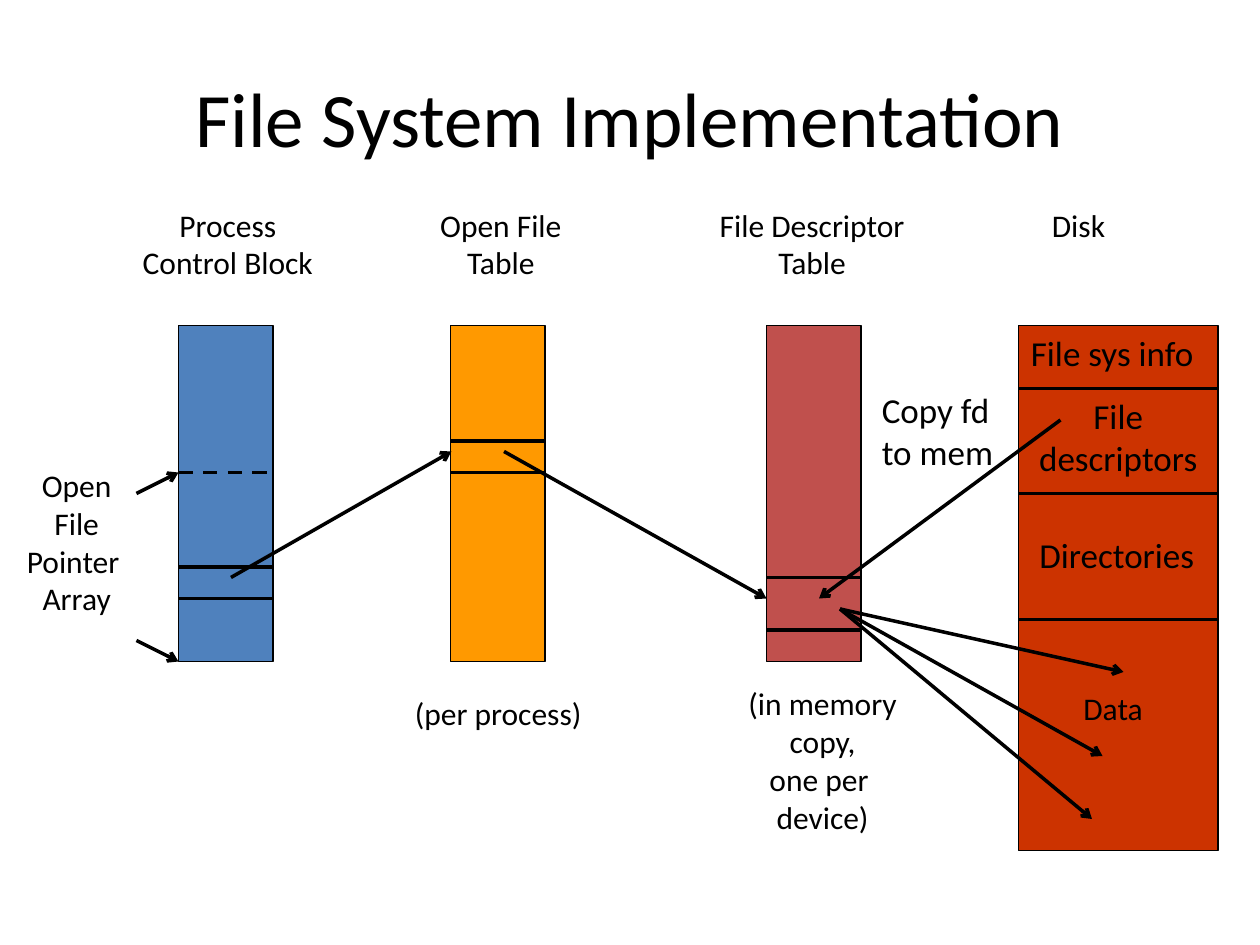
from typing import NamedTuple

from lxml import etree
from pptx import Presentation
from pptx import util as u
from pptx.dml.color import RGBColor
from pptx.enum import dml, shapes, text
from pptx.oxml import ns

COLS, ROWS = 120, 90
INK = {"black": "000000", "blue": "4F81BD", "amber": "FF9900",
       "rose": "C0504D", "rust": "CC3300"}
FONT = "Calibri"

deck = Presentation()
deck.slide_width, deck.slide_height = u.Inches(10), u.Inches(7.5)
CELL_W, CELL_H = deck.slide_width / COLS, deck.slide_height / ROWS
slide = deck.slides.add_slide(deck.slide_layouts[5])


class Bar(NamedTuple):
    col: float
    wide: float
    tall: float
    ink: str
    rules: tuple[float, ...]


class Label(NamedTuple):
    words: str
    col: float
    row: float
    wide: float
    tall: float
    size: float = 18
    mid: bool = True
    wrap: bool = False


class Arrow(NamedTuple):
    start: tuple[float, float]
    end: tuple[float, float]


TOP, HEAD = 31, 19
BARS = [
    Bar(17, 9, 32, "blue", (54, 57)),
    Bar(42.9, 9, 32, "amber", (42, 45)),
    Bar(73, 9, 32, "rose", (55, 60)),
    Bar(97, 19, 50, "rust", (37, 47, 59)),
]
LABELS = [
    Label("Process\nControl Block", 9.1, HEAD, 25.2, 10.8),
    Label("Open File\nTable", 38.5, HEAD, 18.4, 10.8),
    Label("File Descriptor\nTable", 64.1, HEAD, 26.5, 10.8),
    Label("Disk", 99, HEAD, 10, 6, mid=False),
    Label("Open\nFile\nPointer \nArray", -0.2, 43.8, 15, 20.4),
    Label("(per process)", 38.2, 65.5, 18.5, 4.8),
    Label("(in memory\ncopy,\none per \ndevice)", 67.8, 64.6, 21.1, 20.4),
    Label("Copy fd\nto mem", 82.8, 36.4, 13.2, 9.2, 20, False),
    Label("File sys info", 97, TOP, 19, 5.2, 20, False, True),
    Label("File\ndescriptors", 97, 37, 19, 9.2, 20, True, True),
    Label("Directories", 97.8, 50.2, 17.3, 5.2, 20, False),
    Label("Data", 102, 65, 10, 6, mid=False),
]
FILE = (80, 58)
ARROWS = [
    Arrow((13, 47), (17, 45)),
    Arrow((13, 61), (17, 63)),
    Arrow((22, 55), (43, 43)),
    Arrow((48, 43), (73, 57)),
    Arrow((101, 40), (78, 57)),
    *(Arrow(FILE, goal) for goal in [(107, 64), (105, 72), (104, 78)]),
]


def across(cols: float) -> int:
    return round(cols * CELL_W)


def down(rows: float) -> int:
    return round(rows * CELL_H)


def color(name: str) -> RGBColor:
    return RGBColor.from_string(INK[name])


def write(frame, words: str, *, size: float = 18, mid: bool = True,
          ink: str = "black") -> None:
    """Fill a text frame, one paragraph for each line of words."""
    for i, line in enumerate(words.split("\n")):
        para = frame.add_paragraph() if i else frame.paragraphs[0]
        para.alignment = text.PP_ALIGN.CENTER if mid else text.PP_ALIGN.LEFT
        run = para.add_run()
        run.text = line
        run.font.name, run.font.size = FONT, u.Pt(size)
        run.font.color.rgb = color(ink)


def draw_line(start: tuple[float, float], end: tuple[float, float], *,
              dash: bool = False, tip: bool = False) -> None:
    line = slide.shapes.add_connector(
        shapes.MSO_CONNECTOR.STRAIGHT, across(start[0]), down(start[1]),
        across(end[0]), down(end[1]))
    line.line.color.rgb, line.line.width = color("black"), u.Pt(2)
    if dash:
        line.line.dash_style = dml.MSO_LINE.DASH
    if tip:
        etree.SubElement(line.line._get_or_add_ln(), ns.qn("a:tailEnd"),
                         type="arrow")
    etree.SubElement(line._element.spPr, ns.qn("a:effectLst"))


def draw_bar(bar: Bar) -> None:
    box = slide.shapes.add_shape(
        shapes.MSO_SHAPE.RECTANGLE, across(bar.col), down(TOP),
        across(bar.wide), down(bar.tall))
    box.shadow.inherit = False
    box.fill.solid()
    box.fill.fore_color.rgb = color(bar.ink)
    box.line.color.rgb, box.line.width = color("black"), u.Pt(1)
    for row in bar.rules:
        draw_line((bar.col, row), (bar.col + bar.wide, row))


def draw_label(label: Label) -> None:
    frame = slide.shapes.add_textbox(
        across(label.col), down(label.row),
        across(label.wide), down(label.tall)).text_frame
    frame.word_wrap = label.wrap
    frame.auto_size = text.MSO_AUTO_SIZE.SHAPE_TO_FIT_TEXT
    write(frame, label.words, size=label.size, mid=label.mid)


def main() -> None:
    title = slide.shapes.title
    title.left, title.top = across(6), down(3.6)
    title.width, title.height = across(108), down(15)
    title.text_frame.vertical_anchor = text.MSO_ANCHOR.MIDDLE
    write(title.text_frame, "File System Implementation", size=44)

    for bar in BARS:
        draw_bar(bar)
    block = BARS[0]
    draw_line((block.col, 45), (block.col + block.wide, 45), dash=True)
    for label in LABELS:
        draw_label(label)
    for arrow in ARROWS:
        draw_line(arrow.start, arrow.end, tip=True)
    deck.save("out.pptx")


if __name__ == "__main__":
    main()
